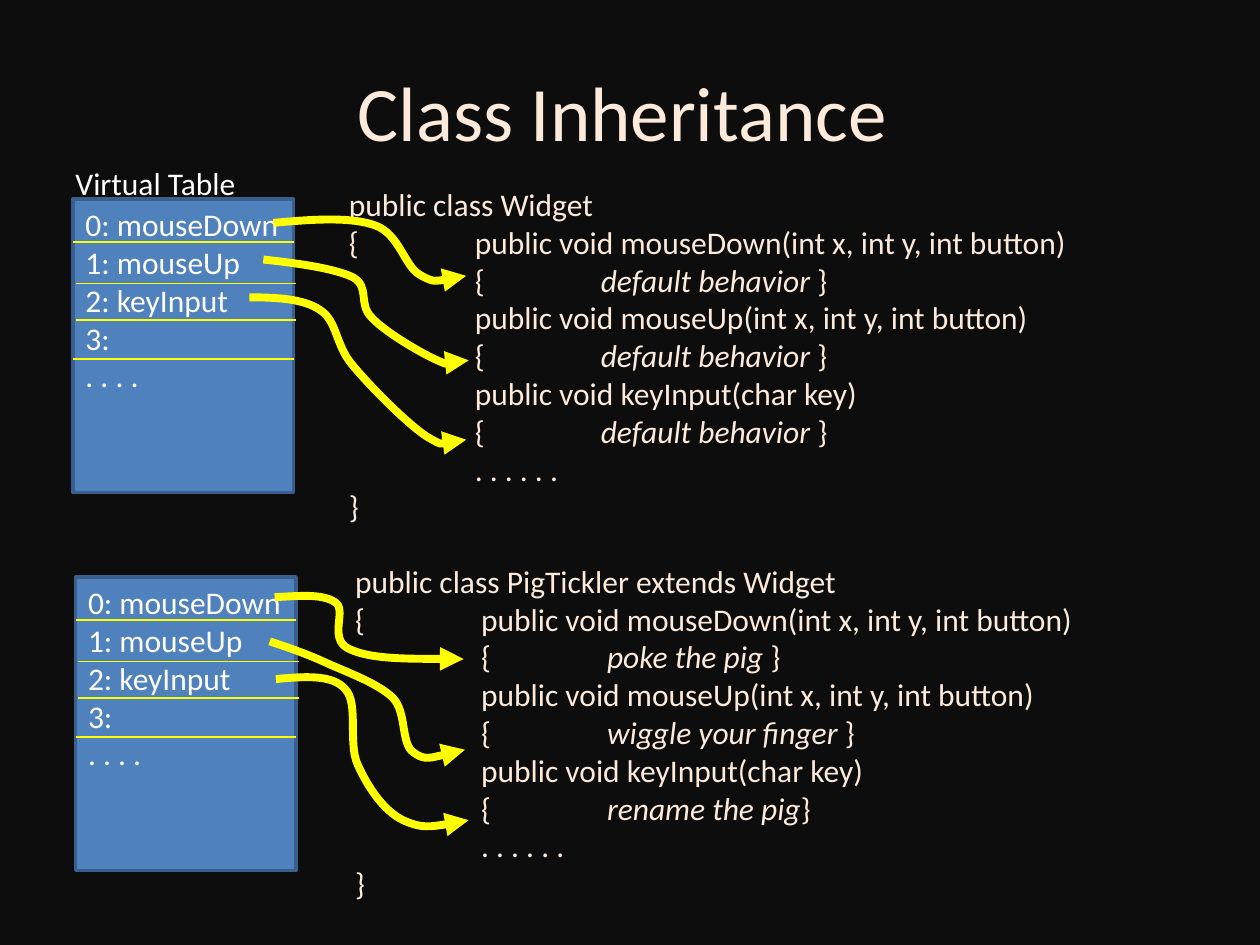
"""Build a slide on class inheritance with virtual tables pointing to methods."""
import pptx
import pptx.util
import pptx.dml.color
import pptx.enum.shapes
import pptx.enum.text
import pptx.oxml

Inches, Pt = pptx.util.Inches, pptx.util.Pt
COLORS = {"background": "0D0D0D", "code": "FDEADA", "table": "4F81BD",
          "border": "3A5F8C", "label": "FFFFFF", "arrow": "FFFF00"}
FONT = "Calibri"
CODE_TABS = [1, 2]
SLOTS = ["0: mouseDown", "1: mouseUp", "2: keyInput", "3:", ". . . ."]
DIVIDERS = [(0, 0.34), (0.02, 0.67), (0.02, 0.96), (0, 1.27)]
METHODS = ["mouseDown(int x, int y, int button)",
           "mouseUp(int x, int y, int button)", "keyInput(char key)"]
CLASSES = [
    {"head": "public class Widget", "code_at": (2.67, 1.42), "table_at": (0.58, 1.58),
     "bodies": [("default behavior", " }"), ("default behavior", " }"),
                ("default behavior ", "}")],
     "arrows": [
         [(2.17, 1.77), (2.48, 1.74), (2.79, 1.72), (2.98, 1.79), (3.17, 1.86),
          (3.21, 2.11), (3.33, 2.18), (3.45, 2.25), (3.58, 2.22), (3.7, 2.19)],
         [(2.09, 2.06), (2.37, 2.09), (2.65, 2.13), (2.8, 2.2), (2.94, 2.28),
          (2.84, 2.41), (2.95, 2.52), (3.05, 2.63), (3.32, 2.79), (3.45, 2.85),
          (3.58, 2.91), (3.65, 2.88), (3.72, 2.86)],
         [(1.98, 2.36), (2.19, 2.36), (2.41, 2.37), (2.54, 2.46), (2.68, 2.55),
          (2.66, 2.74), (2.8, 2.9), (2.94, 3.07), (3.23, 3.36), (3.38, 3.46),
          (3.53, 3.55), (3.62, 3.52), (3.7, 3.49)]]},
    {"head": "public class PigTickler extends Widget", "code_at": (2.72, 4.41),
     "table_at": (0.6, 4.58),
     "bodies": [("poke the pig ", "}"), ("wiggle your finger ", "}"),
                ("rename the pig", "}")],
     "arrows": [
         [(2.18, 4.74), (2.37, 4.73), (2.56, 4.71), (2.66, 4.78), (2.76, 4.84),
          (2.6, 5.07), (2.77, 5.15), (2.94, 5.23), (3.31, 5.23), (3.68, 5.23)],
         [(2.19, 5.39), (2.41, 5.37), (2.64, 5.35), (2.74, 5.47), (2.85, 5.58),
          (2.76, 5.9), (2.84, 6.07), (2.92, 6.25), (3.05, 6.44), (3.2, 6.51),
          (3.35, 6.58), (3.54, 6.55), (3.72, 6.51)],
         [(2.14, 5.09), (2.29, 5.14), (2.44, 5.19), (2.61, 5.27), (2.77, 5.34),
          (3.01, 5.43), (3.12, 5.54), (3.23, 5.66), (3.18, 5.9), (3.28, 5.97),
          (3.37, 6.04), (3.53, 5.99), (3.69, 5.95)]]},
]


def rgb(name):
    return pptx.dml.color.RGBColor.from_string(COLORS[name])


def drawing_element(tag, **attributes):
    element = pptx.oxml.parse_xml(
        f'<a:{tag} xmlns:a="http://schemas.openxmlformats.org/drawingml/2006/main"/>')
    for key, value in attributes.items():
        element.set(key, value)
    return element


def write(tf, lines, color, size=18, align=pptx.enum.text.PP_ALIGN.LEFT):
    for i, runs in enumerate(lines):
        p = tf.add_paragraph() if i else tf.paragraphs[0]
        p.alignment = align
        for text, italic in runs:
            r = p.add_run()
            r.text = text
            r.font.name, r.font.size, r.font.italic = FONT, Pt(size), italic
            r.font.color.rgb = rgb(color)


def add_text(s, box, lines, color):
    tf = s.shapes.add_textbox(*map(Inches, box)).text_frame
    tf.word_wrap = False
    tf.auto_size = pptx.enum.text.MSO_AUTO_SIZE.SHAPE_TO_FIT_TEXT
    write(tf, lines, color)
    return tf


def set_tabs(tf, stops):
    for p in tf.paragraphs:
        tabs = drawing_element("tabLst")
        for stop in stops:
            tabs.append(drawing_element("tab", pos=str(Inches(stop)), algn="l"))
        p._p.get_or_add_pPr().append(tabs)


def code_lines(head, bodies):
    lines = [[(head, False)]]
    for i, (method, (body, close)) in enumerate(zip(METHODS, bodies)):
        start = "\t" if i else "{\t"
        lines += [[(f"{start}public void {method}", False)],
                  [("\t{\t", False), (body, True), (close, False)]]
    return lines + [[("\t. . . . . .", False)], [("}", False)]]


def add_virtual_table(s, left, top):
    group = s.shapes.add_group_shape()
    table = group.shapes.add_shape(pptx.enum.shapes.MSO_SHAPE.RECTANGLE,
                                   *map(Inches, (left, top, 1.75, 2.33)))
    table.shadow.inherit = False
    table.fill.solid()
    table.fill.fore_color.rgb = rgb("table")
    table.line.color.rgb = rgb("border")
    table.line.width = Pt(2)
    tf = table.text_frame
    tf.word_wrap = True
    tf.vertical_anchor = pptx.enum.text.MSO_ANCHOR.TOP
    write(tf, [[(slot, False)] for slot in SLOTS], "label")
    for dx, dy in DIVIDERS:
        ends = (left + dx, top + dy, left + dx + 1.75, top + dy)
        divider = group.shapes.add_connector(
            pptx.enum.shapes.MSO_CONNECTOR.STRAIGHT, *map(Inches, ends))
        divider.line.color.rgb = rgb("arrow")
        divider.line.width = Pt(0.75)
        divider._element.spPr.append(drawing_element("effectLst"))


def add_curved_arrow(s, points):
    start, *rest = [(Inches(x), Inches(y)) for x, y in points]
    builder = s.shapes.build_freeform(*start)
    builder.add_line_segments(rest, close=False)
    arrow = builder.convert_to_shape()
    segments = arrow._element.xpath(".//a:lnTo")
    for i in range(0, len(segments), 3):
        curve = drawing_element("cubicBezTo")
        segments[i].addprevious(curve)
        for segment in segments[i:i + 3]:
            curve.append(segment[0])
            segment.getparent().remove(segment)
    arrow.shadow.inherit = False
    arrow.fill.background()
    arrow.line.color.rgb = rgb("arrow")
    arrow.line.width = Pt(4.5)
    arrow.line._get_or_add_ln().append(drawing_element("tailEnd", type="triangle"))


def main():
    prs = pptx.Presentation()
    prs.slide_width, prs.slide_height = Inches(10), Inches(7.5)
    s = prs.slides.add_slide(prs.slide_layouts[5])
    s.background.fill.solid()
    s.background.fill.fore_color.rgb = rgb("background")

    title = s.shapes.title
    title.left, title.top, title.width, title.height = map(Inches, (0.44, 0.25, 9, 1.25))
    title.text_frame.vertical_anchor = pptx.enum.text.MSO_ANCHOR.MIDDLE
    write(title.text_frame, [[("Class Inheritance", False)]], "code", 44,
          pptx.enum.text.PP_ALIGN.CENTER)

    for item in CLASSES:
        tf = add_text(s, (*item["code_at"], 5.97, 2.83),
                      code_lines(item["head"], item["bodies"]), "code")
        set_tabs(tf, CODE_TABS)
    add_text(s, (0.5, 1.25, 1.49, 0.4), [[("Virtual Table", False)]], "label")
    for item in CLASSES:
        add_virtual_table(s, *item["table_at"])
        for points in item["arrows"]:
            add_curved_arrow(s, points)
    prs.save("out.pptx")


if __name__ == "__main__":
    main()
